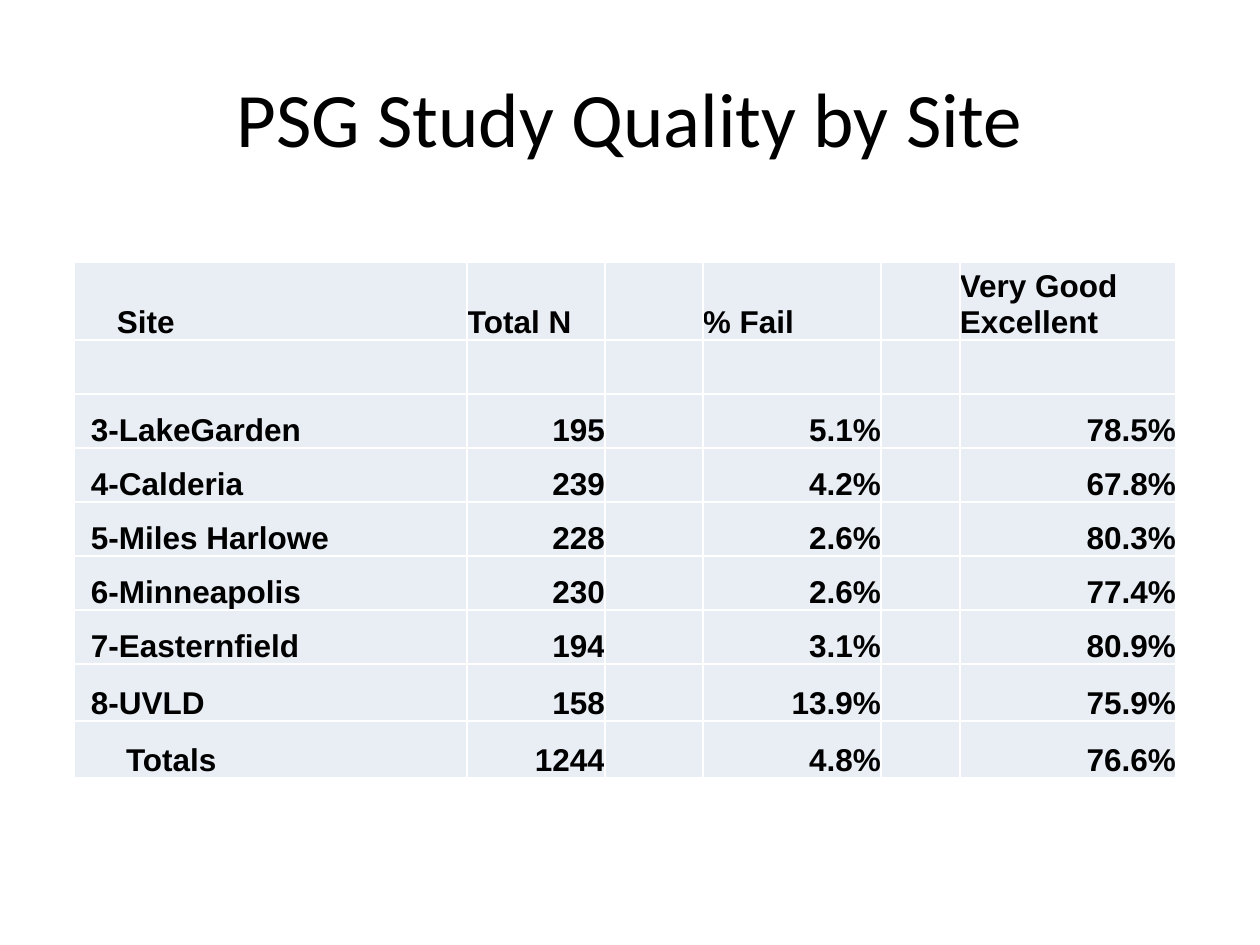
import pptx
import pptx.dml.color
import pptx.enum.text
import pptx.oxml
import pptx.oxml.ns
import pptx.util

EMU_PER_PX = 914400 // 126
ANCHOR = pptx.enum.text.MSO_ANCHOR
ALIGN = pptx.enum.text.PP_ALIGN

COLUMN_WIDTHS = [393, 138, 98, 178, 79, 216]
ROW_HEIGHTS = [78] + [54] * 6 + [57] * 2
VALUE_COLUMNS = [1, 3, 5]

HEADINGS = ["Total N", "% Fail", "Very Good\nExcellent"]
SITES = [
    ("3-LakeGarden", "195", "5.1%", "78.5%"),
    ("4-Calderia", "239", "4.2%", "67.8%"),
    ("5-Miles Harlowe", "228", "2.6%", "80.3%"),
    ("6-Minneapolis", "230", "2.6%", "77.4%"),
    ("7-Easternfield", "194", "3.1%", "80.9%"),
    ("8-UVLD", "158", "13.9%", "75.9%"),
]
TOTALS = ["1244", "4.8%", "76.6%"]
HEADING_INDENT, SITE_INDENT, TOTALS_INDENT = 43, 17, 52


def px(length):
    return pptx.util.Emu(length * EMU_PER_PX)


def color(value):
    return pptx.dml.color.RGBColor.from_string(value)


def format_text(frame, font, size, align, bold=False):
    for para in frame.paragraphs:
        para.alignment = align
        for span in para.runs:
            span.font.name = font
            span.font.size = pptx.util.Pt(size)
            span.font.bold = bold
            span.font.color.rgb = color("000000")


def add_title(page, text):
    box = page.shapes.add_textbox(px(63), px(38), px(1134), px(158))
    frame = box.text_frame
    frame.word_wrap = True
    frame.vertical_anchor = ANCHOR.MIDDLE
    frame.text = text
    format_text(frame, "Calibri", 44, ALIGN.CENTER)


def style_cell(cell):
    """Give the cell its fill, white borders and zero margins."""
    cell.margin_left = cell.margin_right = 0
    cell.margin_top = cell.margin_bottom = 0
    cell.vertical_anchor = ANCHOR.BOTTOM
    properties = cell._tc.get_or_add_tcPr()
    for side in ("lnL", "lnR", "lnT", "lnB"):
        properties.append(pptx.oxml.parse_xml(
            f'<a:{side} {pptx.oxml.ns.nsdecls("a")} w="12700"><a:solidFill>'
            f'<a:srgbClr val="FFFFFF"/></a:solidFill></a:{side}>'))
    cell.fill.solid()
    cell.fill.fore_color.rgb = color("E9EDF4")


def fill_cell(cell, text, align, indent=0):
    cell.margin_left = px(indent)
    cell.text_frame.text = text
    format_text(cell.text_frame, "Arial", 18, align, bold=True)


def fill_row(table, row, label, indent, values, align=ALIGN.RIGHT):
    fill_cell(table.cell(row, 0), label, ALIGN.LEFT, indent)
    for column, value in zip(VALUE_COLUMNS, values):
        fill_cell(table.cell(row, column), value, align)


def add_quality_table(page):
    table = page.shapes.add_table(
        len(ROW_HEIGHTS), len(COLUMN_WIDTHS), px(74), px(262),
        px(sum(COLUMN_WIDTHS)), px(sum(ROW_HEIGHTS))).table
    for column, width in zip(table.columns, COLUMN_WIDTHS):
        column.width = px(width)
    for row, height in zip(table.rows, ROW_HEIGHTS):
        row.height = px(height)
    for cell in table.iter_cells():
        style_cell(cell)

    fill_row(table, 0, "Site", HEADING_INDENT, HEADINGS, ALIGN.LEFT)
    for row, (site, *values) in enumerate(SITES, start=2):
        fill_row(table, row, site, SITE_INDENT, values)
    fill_row(table, len(ROW_HEIGHTS) - 1, "Totals", TOTALS_INDENT, TOTALS)


def main():
    deck = pptx.Presentation()
    deck.slide_width = px(1260)
    deck.slide_height = px(945)
    page = deck.slides.add_slide(deck.slide_layouts[6])
    add_title(page, "PSG Study Quality by Site")
    add_quality_table(page)
    deck.save("out.pptx")


if __name__ == "__main__":
    main()
